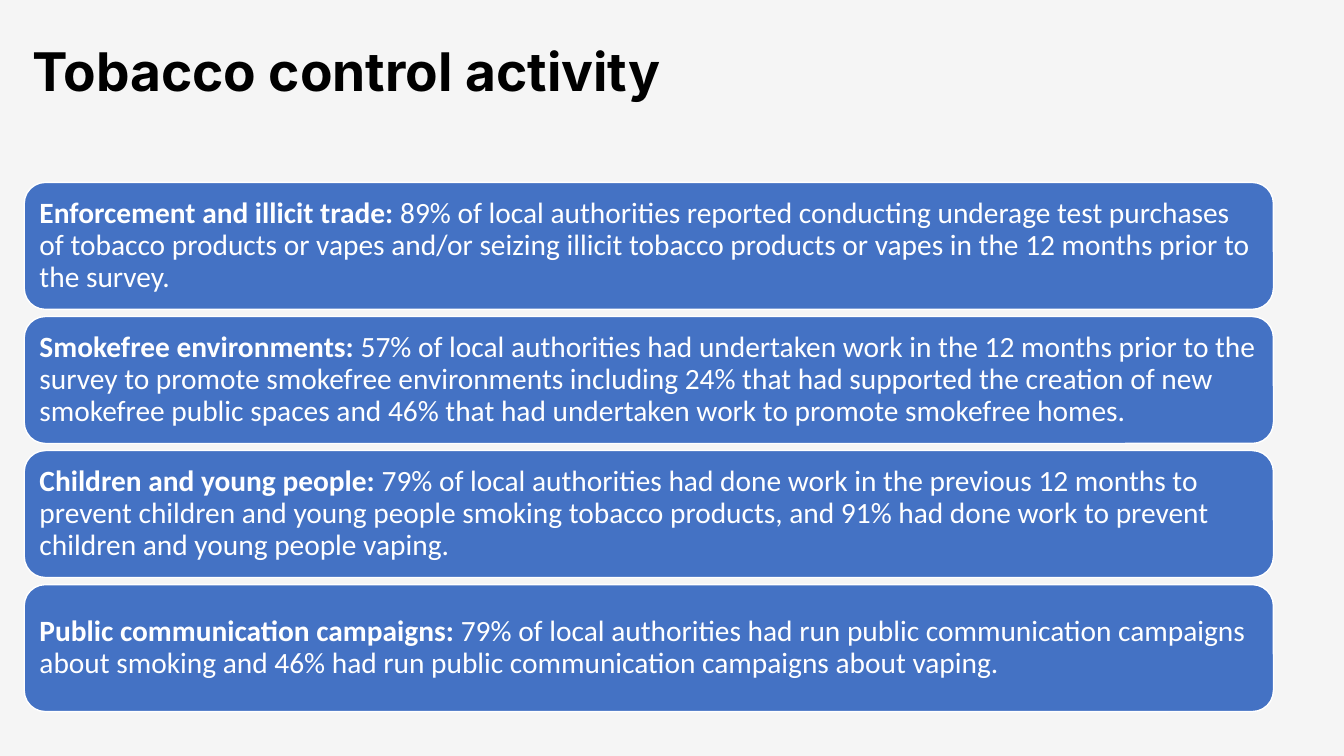
from pptx import Presentation
from pptx.dml.color import RGBColor
from pptx.enum.shapes import MSO_SHAPE
from pptx.enum.text import MSO_ANCHOR, PP_ALIGN
from pptx.util import Inches, Pt

COLORS = {"background": "F5F5F5", "card": "4472C4", "white": "FFFFFF", "title": "000000"}

ACTIVITIES = [
    ("Enforcement and illicit trade: ",
     "89% of local authorities reported conducting underage test purchases of tobacco "
     "products or vapes and/or seizing illicit tobacco products or vapes in the 12 months "
     "prior to the survey."),
    ("Smokefree environments: ",
     "57% of local authorities had undertaken work in the 12 months prior to the survey to "
     "promote smokefree environments including 24% that had supported the creation of new "
     "smokefree public spaces and 46% that had undertaken work to promote smokefree homes."),
    ("Children and young people: ",
     "79% of local authorities had done work in the previous 12 months to prevent children "
     "and young people smoking tobacco products, and 91% had done work to prevent children "
     "and young people vaping."),
    ("Public communication campaigns: ",
     "79% of local authorities had run public communication campaigns about smoking and 46% "
     "had run public communication campaigns about vaping."),
]


def add_run(paragraph, text, font, size, color, bold):
    run = paragraph.add_run()
    run.text = text
    run.font.name = font
    run.font.size = Pt(size)
    run.font.bold = bold
    run.font.color.rgb = RGBColor.from_string(COLORS[color])


prs = Presentation()
prs.slide_width = Inches(13.33)
prs.slide_height = Inches(7.5)
slide = prs.slides.add_slide(prs.slide_layouts[6])
slide.background.fill.solid()
slide.background.fill.fore_color.rgb = RGBColor.from_string(COLORS["background"])

title = slide.shapes.add_textbox(Inches(0.22), Inches(0.15), Inches(8.37), Inches(1.17))
title.text_frame.word_wrap = True
title.text_frame.vertical_anchor = MSO_ANCHOR.MIDDLE
heading = title.text_frame.paragraphs[0]
heading.line_spacing = 0.9
add_run(heading, "Tobacco control activity", "Inter", 38, "title", True)

CARD_TOP, CARD_PITCH = 1.81, 1.33
for row, (topic, finding) in enumerate(ACTIVITIES):
    card = slide.shapes.add_shape(
        MSO_SHAPE.ROUNDED_RECTANGLE,
        Inches(0.24), Inches(CARD_TOP + row * CARD_PITCH), Inches(12.39), Inches(1.26))
    card.shadow.inherit = False
    card.fill.solid()
    card.fill.fore_color.rgb = RGBColor.from_string(COLORS["card"])
    card.line.color.rgb = RGBColor.from_string(COLORS["white"])
    card.line.width = Pt(1)

    frame = card.text_frame
    frame.word_wrap = True
    frame.vertical_anchor = MSO_ANCHOR.MIDDLE
    frame.margin_left = frame.margin_right = Inches(0.09)
    frame.margin_top = frame.margin_bottom = Inches(0.09)
    statement = frame.paragraphs[0]
    statement.alignment = PP_ALIGN.LEFT
    statement.line_spacing = 0.9
    add_run(statement, topic, "Calibri", 21, "white", True)
    add_run(statement, finding, "Calibri", 21, "white", False)

prs.save("out.pptx")
